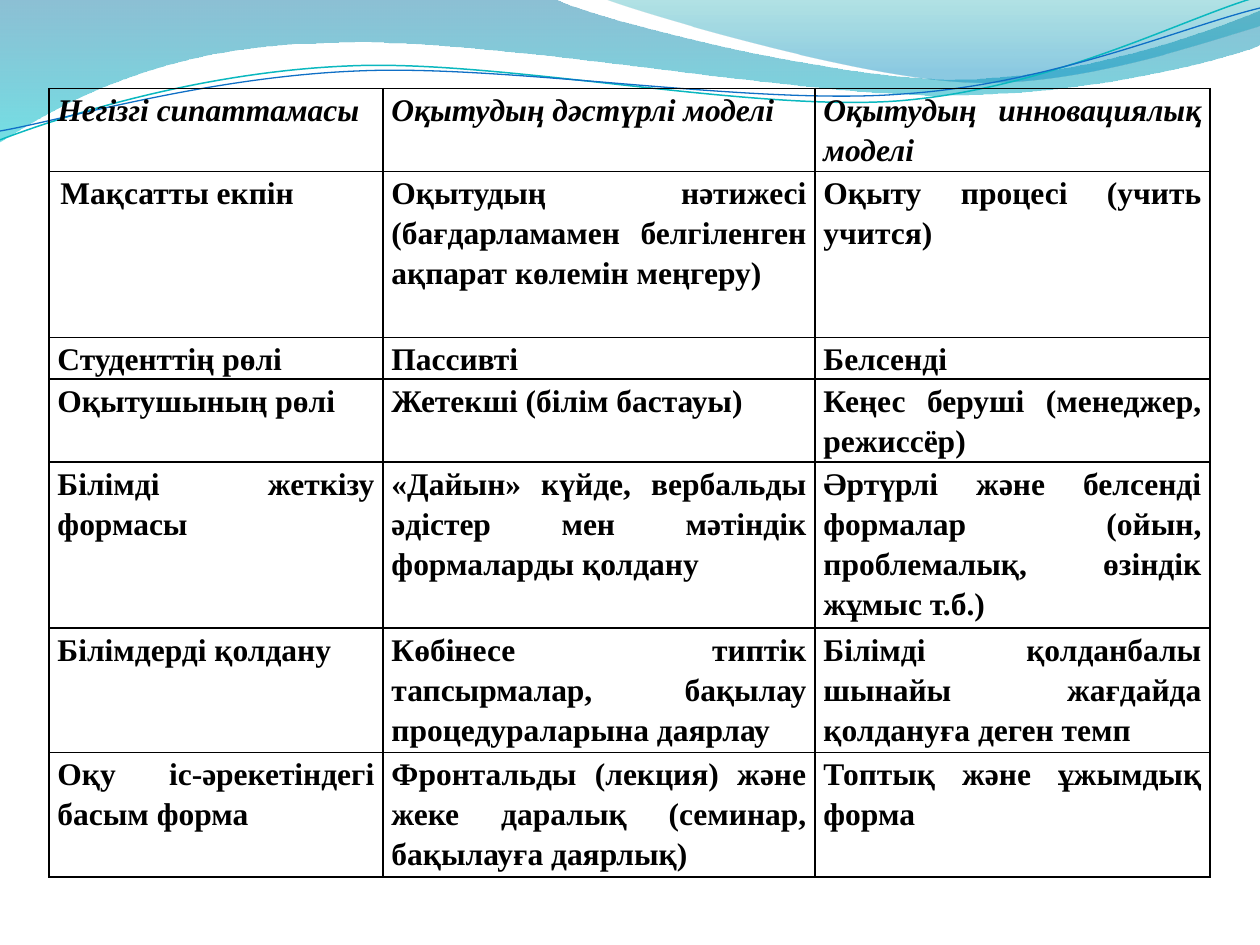
"""Builds a slide comparing traditional and innovative teaching models."""
import math

import pptx
import pptx.dml.color
import pptx.enum.text
import pptx.oxml
import pptx.oxml.ns
import pptx.util

PX = 914400 / 126
COLORS = {"text": "000000", "border": "000000",
          "wave_blue": "0074A1", "wave_aqua": "00C6CF",
          "crest_teal": "00A1A9", "crest_blue": "008BBF",
          "line_teal": "0AB8BF", "line_blue": "0F6FC6"}
FONT = "Times New Roman"

HEADINGS = ("Негізгі сипаттамасы", "Оқытудың дәстүрлі моделі",
            "Оқытудың инновациялық моделі")
COMPARISON = [
    ("Мақсатты екпін",
     "Оқытудың нәтижесі (бағдарламамен белгіленген ақпарат көлемін меңгеру)",
     "Оқыту процесі (учить учится)"),
    ("Студенттің рөлі", "Пассивті", "Белсенді"),
    ("Оқытушының рөлі", "Жетекші (білім бастауы)",
     "Кеңес беруші (менеджер, режиссёр)"),
    ("Білімді жеткізу формасы",
     "«Дайын» күйде, вербальды әдістер мен мәтіндік формаларды қолдану ",
     "Әртүрлі және белсенді формалар (ойын, проблемалық, өзіндік жұмыс т.б.)"),
    ("Білімдерді қолдану",
     "Көбінесе типтік тапсырмалар, бақылау процедураларына даярлау",
     "Білімді қолданбалы шынайы жағдайда қолдануға деген темп"),
    ("Оқу іс-әрекетіндегі басым форма",
     "Фронтальды (лекция) және жеке даралық (семинар, бақылауға даярлық)",
     "Топтық және ұжымдық форма"),
]
TABLE_LEFT, TABLE_TOP, TABLE_HEIGHT = 49, 88.5, 818
COLUMN_WIDTHS = (334, 432, 395)
ROW_LINES = (2, 4, 1, 2, 4, 3, 3)
LINE_HEIGHT = 41.5
CELL_INSET = 8.5

BANDS = [
    {"outline": [[(0, 0)], [(554, -1)],
                 [(600, 21), (837, 79), (955, 79)],
                 [(1074, 79), (1207, 33), (1260, 11)], [(1261, 45)],
                 [(1239, 55), (1096, 96), (940, 95)],
                 [(784, 95), (481, 35), (324, 43)],
                 [(163, 45), (58, 105), (-1, 142)], [(0, 0)]],
     "stops": [(0, "wave_blue", 45), (1, "wave_aqua", 55)]},
    {"outline": [[(604, -1)], [(642, 14), (859, 78), (969, 82)],
                 [(1079, 87), (1211, 40), (1260, 26)], [(1260, 0)], [(604, -1)]],
     "stops": [(0, "crest_teal", 30), (0.8, "crest_blue", 45)]},
]
RIPPLE_TILT = -2.7
RIPPLES = [
    {"outline": [[(0, 140)], [(60, 117), (199, 72), (349, 66)],
                 [(498, 59), (747, 112), (898, 101)],
                 [(1050, 89), (1182, 19), (1257, -3)]],
     "center": (629, 72), "color": "line_teal", "width": 0.85},
    {"outline": [[(0, 131)], [(59, 121), (207, 77), (357, 71)],
                 [(508, 64), (752, 106), (903, 94)],
                 [(1053, 84), (1185, 26), (1260, 8)]],
     "center": (629, 74), "color": "line_blue", "width": 0.75},
]


def px(value):
    return pptx.util.Emu(round(value * PX))


def rgb(name):
    return pptx.dml.color.RGBColor.from_string(COLORS[name])


def turn(point, center, degrees):
    angle = math.radians(degrees)
    dx, dy = point[0] - center[0], point[1] - center[1]
    return (center[0] + dx * math.cos(angle) - dy * math.sin(angle),
            center[1] + dx * math.sin(angle) + dy * math.cos(angle))


def add_curve(slide, outline, close):
    start, *rest = [(px(x), px(y)) for segment in outline for x, y in segment]
    builder = slide.shapes.build_freeform(*start, scale=1.0)
    builder.add_line_segments(rest, close=close)
    curve = builder.convert_to_shape()
    curve.shadow.inherit = False
    strokes = iter(list(curve._element.iter(pptx.oxml.ns.qn("a:lnTo"))))
    for segment in outline[1:]:
        controls = [next(strokes) for _ in segment]
        if len(controls) == 3:
            bezier = controls[0].makeelement(pptx.oxml.ns.qn("a:cubicBezTo"), {})
            controls[0].addprevious(bezier)
            for control in controls:
                bezier.append(control[0])
                control.getparent().remove(control)
    return curve


def add_band(slide, outline, stops):
    band = add_curve(slide, outline, True)
    band.line.fill.background()
    band.fill.gradient()
    band.fill.gradient_angle = 270
    for stop, (position, color, _) in zip(band.fill.gradient_stops, stops):
        stop.position = position
        stop.color.rgb = rgb(color)
    tints = list(band._element.spPr.iter(pptx.oxml.ns.qn("a:srgbClr")))
    for tint, (_, _, opacity) in zip(tints, stops):
        tint.append(tint.makeelement(pptx.oxml.ns.qn("a:alpha"),
                                     {"val": str(opacity * 1000)}))


def add_ripple(slide, outline, center, color, width):
    level = [[turn(point, center, -RIPPLE_TILT) for point in segment]
             for segment in outline]
    ripple = add_curve(slide, level, False)
    ripple.rotation = RIPPLE_TILT
    ripple.fill.background()
    ripple.line.color.rgb = rgb(color)
    ripple.line.width = pptx.util.Pt(width)


def write(frame, text, size=18, bold=True, italic=False, indent=0):
    paragraph = frame.paragraphs[0]
    paragraph.alignment = pptx.enum.text.PP_ALIGN.JUSTIFY
    paragraph.line_spacing = 1.15
    if indent:
        paragraph._p.get_or_add_pPr().set("indent", str(px(indent)))
    run = paragraph.add_run()
    run.text = text
    run.font.name = FONT
    run.font.size = pptx.util.Pt(size)
    run.font.bold = bold
    run.font.italic = italic
    run.font.color.rgb = rgb("text")


def add_borders(cell):
    properties = cell._tc.get_or_add_tcPr()
    for side in "LRTB":
        properties.append(pptx.oxml.parse_xml(
            f'<a:ln{side} {pptx.oxml.ns.nsdecls("a")} w="12700"><a:solidFill>'
            f'<a:srgbClr val="{COLORS["border"]}"/></a:solidFill></a:ln{side}>'))


def add_comparison(slide):
    frame = slide.shapes.add_table(
        len(ROW_LINES), len(COLUMN_WIDTHS), px(TABLE_LEFT), px(TABLE_TOP),
        px(sum(COLUMN_WIDTHS)), px(TABLE_HEIGHT))
    table = frame.table
    table.first_row = table.horz_banding = False
    for column, width in zip(table.columns, COLUMN_WIDTHS):
        column.width = px(width)
    for row, lines in zip(table.rows, ROW_LINES):
        row.height = px(lines * LINE_HEIGHT)
    frame.height = px(TABLE_HEIGHT)
    for r, texts in enumerate([HEADINGS, *COMPARISON]):
        for c, text in enumerate(texts):
            cell = table.cell(r, c)
            cell.margin_left = cell.margin_right = px(CELL_INSET)
            cell.margin_top = cell.margin_bottom = 0
            add_borders(cell)
            cell.fill.background()
            write(cell.text_frame, text, italic=r == 0,
                  indent=3 if (r, c) == (1, 0) else 0)


def main():
    deck = pptx.Presentation()
    deck.slide_width, deck.slide_height = px(1260), px(945)
    slide = deck.slides.add_slide(deck.slide_layouts[6])
    for band in BANDS:
        add_band(slide, **band)
    for ripple in RIPPLES:
        add_ripple(slide, **ripple)
    add_comparison(slide)
    deck.save("out.pptx")


if __name__ == "__main__":
    main()
